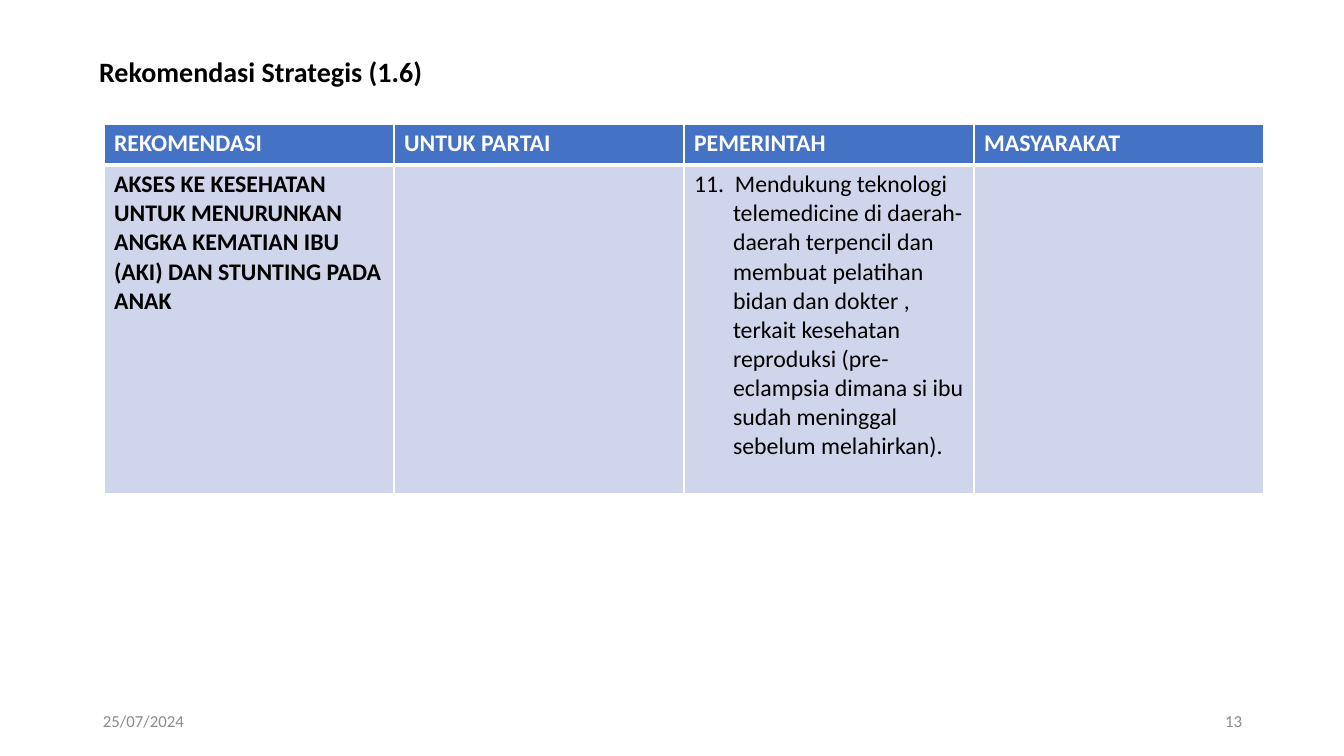
from lxml.etree import SubElement
from pptx import Presentation
from pptx.dml.color import RGBColor
from pptx.enum.text import MSO_ANCHOR as Anchor, PP_ALIGN as Align
from pptx.oxml.ns import qn
from pptx.util import Pt

PX = 914400 / 100.8
SLIDE_SIZE = (1344, 756)
TITLE = ("Rekomendasi Strategis (1.6)", (89, 0, 1159, 146))
FOOTERS = [
    ("25/07/2024", (93, 701, 302, 40), Align.LEFT),
    ("13", (950, 701, 302, 40), Align.RIGHT),
]
TABLE_ORIGIN = (104, 124)
COLUMN_WIDTH = 290
ROW_HEIGHTS = (41, 329)
HANGING_INDENT = 39
HEADERS = ["REKOMENDASI", "UNTUK PARTAI", "PEMERINTAH", "MASYARAKAT"]
RECOMMENDATION = [
    "AKSES KE KESEHATAN UNTUK MENURUNKAN ANGKA KEMATIAN IBU (AKI) DAN STUNTING PADA ANAK",
    "",
    "11.  Mendukung teknologi telemedicine di daerah-daerah terpencil dan membuat pelatihan "
    "bidan dan dokter , terkait kesehatan reproduksi (pre-eclampsia dimana si ibu sudah "
    "meninggal sebelum melahirkan).",
    "",
]
ROW_STYLES = [
    {"fill": "4472C4", "color": "FFFFFF", "borders": {"L": 1, "R": 1, "T": 1, "B": 3}},
    {"fill": "CFD5EA", "color": "000000", "borders": {"L": 1, "R": 1, "T": 3, "B": 1}},
]


def px(length):
    """Turn pixels into EMU."""
    return round(length * PX)


def rgb(value):
    """Turn a hex string into a colour."""
    return RGBColor.from_string(value)


def write(frame, text, color, align=Align.LEFT, **font_format):
    """Fill a text frame with one formatted paragraph and return it."""
    paragraph = frame.paragraphs[0]
    paragraph.alignment = align
    font = paragraph.font
    if text:
        run = paragraph.add_run()
        run.text = text
        font = run.font
    for name, value in {"name": "Calibri", **font_format}.items():
        setattr(font, name, value)
    font.color.rgb = rgb(color)
    return paragraph


def place(shape, box):
    """Move and size a shape."""
    for name, value in zip(("left", "top", "width", "height"), box):
        setattr(shape, name, px(value))


def add_borders(cell, widths):
    """Give a cell white borders of the given point widths."""
    properties = cell._tc.get_or_add_tcPr()
    for side, width in widths.items():
        line = SubElement(properties, qn(f"a:ln{side}"), w=str(Pt(width)))
        fill = SubElement(line, qn("a:solidFill"))
        SubElement(fill, qn("a:srgbClr"), val="FFFFFF")


def add_title(slide):
    """Write the title into its placeholder."""
    text, box = TITLE
    title = slide.shapes.title
    place(title, box)
    title.text_frame.vertical_anchor = Anchor.MIDDLE
    paragraph = write(title.text_frame, text, "000000", size=Pt(20), bold=True)
    paragraph.line_spacing = 0.9


def add_recommendations(slide):
    """Build the recommendation table."""
    rows = [HEADERS, RECOMMENDATION]
    size = (COLUMN_WIDTH * len(HEADERS), sum(ROW_HEIGHTS))
    box = [px(value) for value in TABLE_ORIGIN + size]
    table = slide.shapes.add_table(len(rows), len(HEADERS), *box).table
    table.horz_banding = False
    for column in table.columns:
        column.width = px(COLUMN_WIDTH)
    for row, height, texts, style in zip(table.rows, ROW_HEIGHTS, rows, ROW_STYLES):
        row.height = px(height)
        for cell, text in zip(row.cells, texts):
            add_borders(cell, style["borders"])
            cell.fill.solid()
            cell.fill.fore_color.rgb = rgb(style["fill"])
            numbered = text.startswith("11.")
            paragraph = write(cell.text_frame, text, style["color"], size=Pt(17), bold=not numbered)
            if numbered:
                properties = paragraph._p.get_or_add_pPr()
                properties.set("marL", str(px(HANGING_INDENT)))
                properties.set("indent", str(-px(HANGING_INDENT)))


def add_footers(slide):
    """Add the date and the page number."""
    for text, box, align in FOOTERS:
        frame = slide.shapes.add_textbox(*map(px, box)).text_frame
        frame.word_wrap = True
        frame.vertical_anchor = Anchor.MIDDLE
        write(frame, text, "8C8C8C", align, size=Pt(12))


def main():
    """Build and save the slide."""
    presentation = Presentation()
    presentation.slide_width, presentation.slide_height = map(px, SLIDE_SIZE)
    slide = presentation.slides.add_slide(presentation.slide_layouts[5])
    add_title(slide)
    add_recommendations(slide)
    add_footers(slide)
    presentation.save("out.pptx")


if __name__ == "__main__":
    main()
